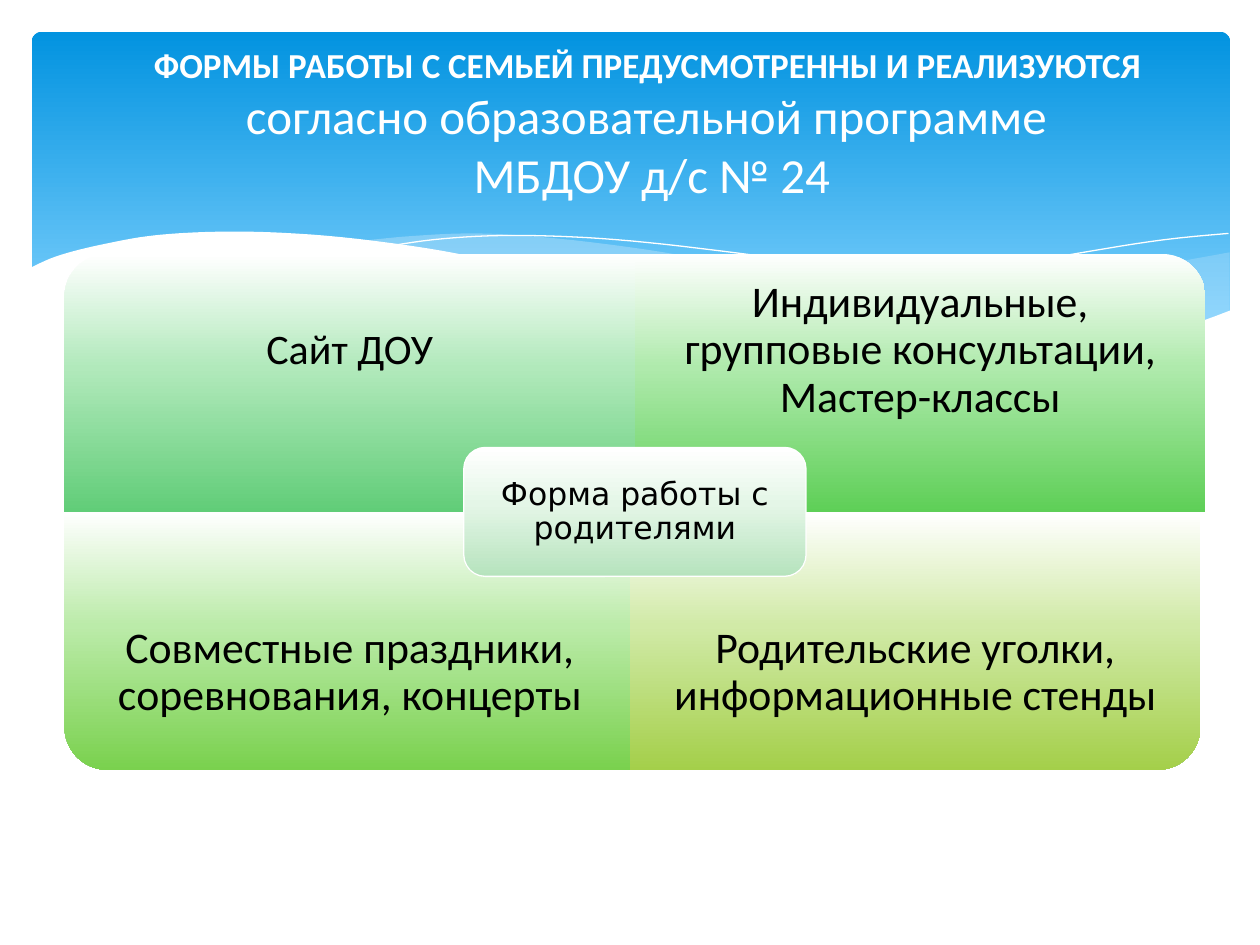
import dataclasses
import itertools

import lxml.etree
import pptx
import pptx.dml.color
import pptx.enum.shapes
import pptx.enum.text
import pptx.oxml
import pptx.oxml.ns
import pptx.util

Cm, Pt = pptx.util.Cm, pptx.util.Pt
SHAPE = pptx.enum.shapes.MSO_SHAPE
qn = pptx.oxml.ns.qn


@dataclasses.dataclass(frozen=True)
class Theme:
    font: str = "Calibri"
    centre_font: str = "DejaVu Sans"
    white: str = "FFFFFF"
    black: str = "000000"
    wave: str = "C6E7FC"
    header: tuple = ((0, "0293E0"), (90, "83D3FE"))
    centre: tuple = ((0, "FFFFFF"), (44, "E4F6E7"), (100, "B6E3BD"))
    heading_size: int = 20
    title_size: int = 28
    site_size: int = 24
    cell_size: int = 25
    centre_size: int = 18


THEME = Theme()

# Curves in percent of the wave band; each shape is a chain of smooth curves.
RIGHT_WAVE = [
    [(97.6, 16), (90.6, 29), (86.1, 39), (75.3, 64), (66.1, 81)],
    [(66.1, 81), (70.5, 87), (75.7, 92), (81.4, 94), (86.3, 91), (90.5, 85),
     (94.2, 75), (97.6, 63)],
]
BACK_WAVE = [
    [(89.3, 89), (83.7, 81), (77.5, 70), (70.6, 56), (62.9, 38), (56.9, 24),
     (51.4, 14), (44.2, 5), (38, 1), (32.8, 3), (28.6, 7)],
    [(28.6, 7), (34.2, 15), (40.4, 27), (44.9, 38), (53, 56), (60.1, 71),
     (66.5, 82), (72.2, 90), (78.5, 94), (84.8, 93), (89.3, 89)],
]
LEFT_LINE = [[(30.9, 11), (34.4, 6), (38.7, 3), (43.3, 3), (48.9, 6), (55.6, 13),
              (63.6, 24), (72.7, 42), (79.5, 57), (90.7, 88)]]
RIGHT_LINE = [[(61.3, 73), (67.2, 57), (74.8, 39), (80.6, 26), (86.6, 15),
               (92.4, 6), (97.5, 1)]]
FRONT_WAVE = [
    [(97.7, 62), (94, 75), (88.7, 87), (82.3, 93), (76.1, 92), (68.8, 84),
     (60.3, 70), (52.9, 55), (44.7, 36), (39.1, 23), (34, 13), (27.1, 4),
     (21.1, 0), (16.1, 0), (11.9, 3), (8.5, 9), (5.9, 15), (4, 21), (2.3, 29)],
    [(2.3, 145), (97.7, 145)],
]

# Column, row, rotation, shift to the left, text, size, gradient colours
CELLS = [
    (0, 0, 270, 0, "Сайт ДОУ", THEME.site_size, ("B1E9BB", "61CD78")),
    (1, 0, 0, 0, "Индивидуальные, групповые консультации, Мастер-классы",
     THEME.cell_size, ("AFEAAC", "5ECF57")),
    (0, 1, 180, 0, "Совместные праздники, соревнования, концерты",
     THEME.cell_size, ("BBEBA9", "7AD14E")),
    (1, 1, 90, 0.1, "Родительские уголки, информационные стенды",
     THEME.cell_size, ("D1EAA7", "A4CF4A")),
]


def rgb(colour):
    return pptx.dml.color.RGBColor.from_string(colour)


def fill_gradient(sp, stops):
    """Fill from top to bottom, whatever the rotation of the shape."""
    sp.fill.gradient()
    grad = sp._element.spPr.find(qn("a:gradFill"))
    grad.set("rotWithShape", "0")
    stop_list = grad.find(qn("a:gsLst"))
    for old in list(stop_list):
        stop_list.remove(old)
    for position, colour in stops:
        gs = lxml.etree.SubElement(stop_list, qn("a:gs"), pos=str(position * 1000))
        lxml.etree.SubElement(gs, qn("a:srgbClr"), val=colour)
    grad.find(qn("a:lin")).set("ang", "5400000")


def add_block(s, kind, box, stops, rotation=0):
    """Add a gradient shape that covers the box after its rotation."""
    x, y, w, h = box
    if rotation % 180:
        x, y, w, h = x + (w - h) / 2, y + (h - w) / 2, h, w
    sp = s.shapes.add_shape(kind, Cm(x), Cm(y), Cm(w), Cm(h))
    sp.shadow.inherit = False
    sp.rotation = rotation
    fill_gradient(sp, stops)
    sp.line.fill.background()
    return sp


def add_text(s, box, lines, inset, colour, font=THEME.font, spacing=None):
    """Add centred lines, each given as (text, size, bold)."""
    tf = s.shapes.add_textbox(*map(Cm, box)).text_frame
    tf.word_wrap = True
    tf.vertical_anchor = pptx.enum.text.MSO_ANCHOR.MIDDLE
    tf.margin_left = tf.margin_right = tf.margin_top = tf.margin_bottom = Cm(inset)
    p = tf.paragraphs[0]
    p.alignment = pptx.enum.text.PP_ALIGN.CENTER
    p.line_spacing = spacing
    for i, (text, size, bold) in enumerate(lines):
        if i:
            p.add_line_break()
        r = p.add_run()
        r.text = text
        r.font.name, r.font.size, r.font.bold = font, Pt(size), bold
        r.font.color.rgb = rgb(colour)


def smooth_curve(points, steps=5):
    """Catmull-Rom curve through the points."""
    padded = [points[0], *points, points[-1]]
    curve = [points[0]]
    for i, step in itertools.product(range(len(points) - 1), range(1, steps + 1)):
        t = step / steps
        curve.append(tuple(
            (2 * b + (c - a) * t + (2 * a - 5 * b + 4 * c - d) * t ** 2
             + (3 * b - a - 3 * c + d) * t ** 3) / 2
            for a, b, c, d in zip(*padded[i:i + 4])))
    return curve


def add_wave(s, box, curves, colour=None, alpha=100):
    """Add a filled wave, or a white hairline when no colour is given."""
    x, y, w, h = box
    points = [(Cm(x + w * px / 100), Cm(y + h * py / 100))
              for curve in curves for px, py in smooth_curve(curve)]
    builder = s.shapes.build_freeform(*points[0])
    builder.add_line_segments(points[1:], close=colour is not None)
    sp = builder.convert_to_shape()
    sp.shadow.inherit = False
    if colour is None:
        sp.fill.background()
        sp.line.color.rgb = rgb(THEME.white)
        sp.line.width = Pt(0)
        return
    sp.fill.solid()
    sp.fill.fore_color.rgb = rgb(colour)
    sp.line.fill.background()
    if alpha < 100:
        clr = sp._element.spPr.find(qn("a:solidFill")).find(qn("a:srgbClr"))
        lxml.etree.SubElement(clr, qn("a:alpha"), val=str(alpha * 1000))


def add_header(s, box):
    x, y, w, h = box
    sp = add_block(s, SHAPE.ROUNDED_RECTANGLE, box, THEME.header)
    sp.adjustments[0] = 0.03
    band = (x - 0.64, y + 4.04, w + 1.24, 2.54)
    add_wave(s, band, RIGHT_WAVE, THEME.wave, 29)
    add_wave(s, band, BACK_WAVE, THEME.wave, 40)
    add_wave(s, band, LEFT_LINE)
    add_wave(s, band, RIGHT_LINE)
    add_wave(s, band, FRONT_WAVE, THEME.white)
    add_text(s, (x + 1.07, y + 0.1, w - 1.3, 3.48), [
        ("ФОРМЫ РАБОТЫ С СЕМЬЕЙ ПРЕДУСМОТРЕННЫ И РЕАЛИЗУЮТСЯ ",
         THEME.heading_size, True),
        ("согласно образовательной программе ", THEME.title_size, False),
        ("МБДОУ д/с № 24", THEME.title_size, False),
    ], 0.13, THEME.white)


def add_matrix(s, box):
    """Four cells around a central label."""
    x, y, w, h = box
    cell_w, cell_h = w / 2, h / 2
    text_h = cell_h * 0.75
    for col, row, rotation, shift, text, size, colours in CELLS:
        left, top = x + col * cell_w - shift, y + row * cell_h
        stops = zip((0, 44, 100), (THEME.white, *colours))
        add_block(s, SHAPE.ROUND_1_RECTANGLE, (left, top, cell_w, cell_h),
                  stops, rotation)
        add_text(s, (left, top + row * (cell_h - text_h), cell_w, text_h),
                 [(text, size, False)], 0.48, THEME.black, spacing=0.9)

    label_w, label_h = cell_w * 0.6, cell_h / 2
    label = (x + (w - label_w) / 2, y + (h - label_h) / 2, label_w, label_h)
    sp = add_block(s, SHAPE.ROUNDED_RECTANGLE, label, THEME.centre)
    sp.line.color.rgb = rgb(THEME.white)
    sp.line.width = Pt(0.75)
    add_text(s, label, [("Форма работы с родителями", THEME.centre_size, False)],
             0.3, THEME.black, THEME.centre_font, 0.9)


def main():
    prs = pptx.Presentation()
    prs.slide_width, prs.slide_height = Cm(25.4), Cm(19.05)
    s = prs.slides.add_slide(prs.slide_layouts[6])
    add_header(s, (0.64, 0.64, 24.16, 6.86))
    add_matrix(s, (1.3, 5.12, 23, 10.4))
    prs.save("out.pptx")


if __name__ == "__main__":
    main()
